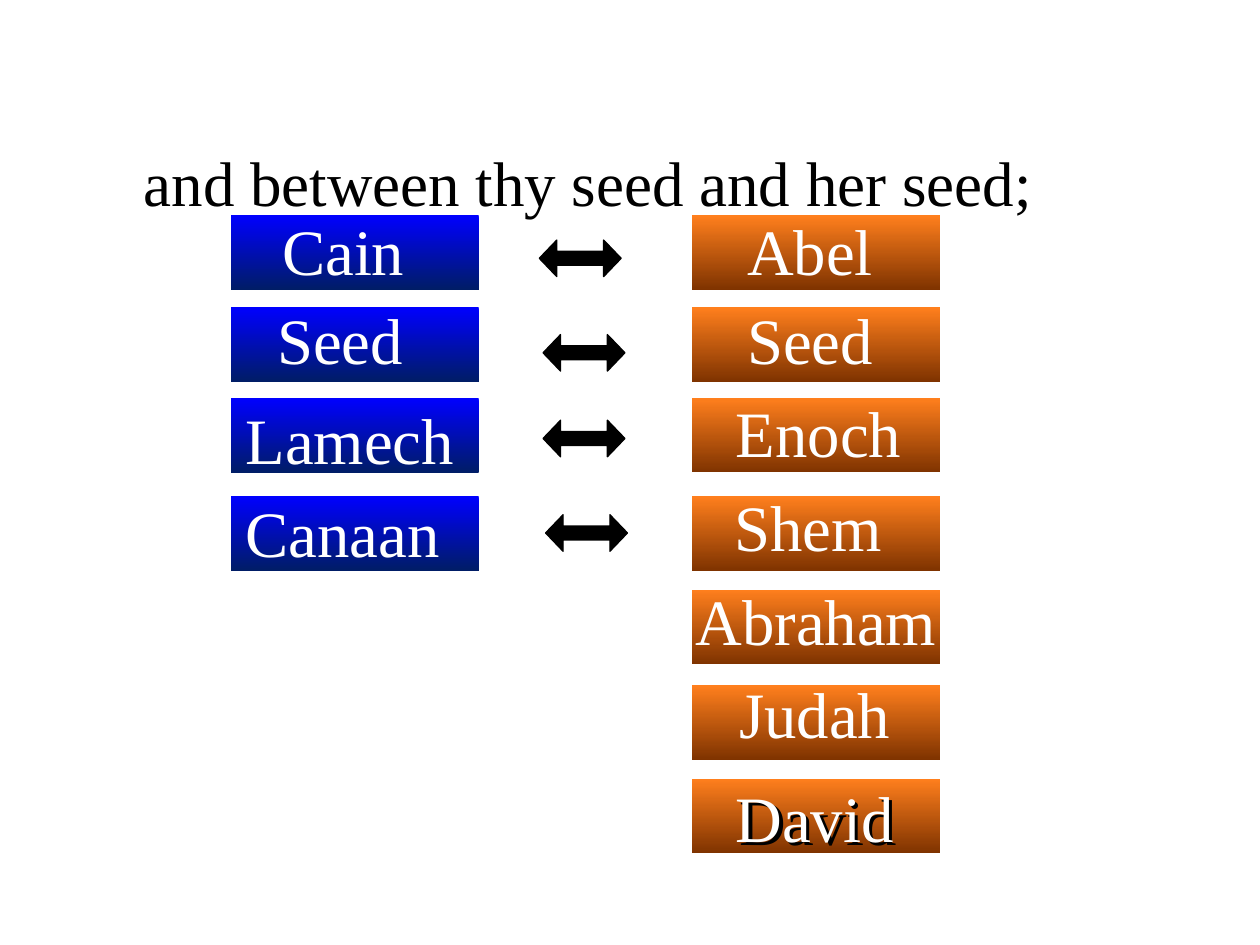
import pptx
import pptx.util
import pptx.dml.color
import pptx.enum.shapes
import pptx.enum.text
import lxml.etree
import pptx.oxml.ns

Inches = pptx.util.Inches
RGBColor = pptx.dml.color.RGBColor
Align = pptx.enum.text.PP_ALIGN
Shape = pptx.enum.shapes.MSO_SHAPE

BLACK = RGBColor(0, 0, 0)
WHITE = RGBColor(0xFF, 0xFF, 0xFF)
BLUES = RGBColor(0, 0, 0xFF), RGBColor(0, 0x1D, 0x66)
RUSTS = RGBColor(0xFF, 0x7F, 0x1D), RGBColor(0x7F, 0x33, 0)
FONT = "Times New Roman"
TILE_W, TILE_H = 1.97, 0.59
ROWS = [1.71, 2.44, 3.16, 3.94, 4.68, 5.44, 6.18]

# Name, then text left, top and width within its tile
LEFT = [
    ("Cain", 0.41, -0.04, 1.11),
    ("Seed", 0.37, -0.06, 1.11),
    ("Lamech", 0.12, 0.01, 1.76),
    ("Canaan", 0.12, -0.03, 1.76),
]
RIGHT = [
    ("Abel", 0.44, -0.04, 1.11),
    ("Seed", 0.44, -0.06, 1.11),
    ("Enoch", 0.35, -0.04, 1.47),
    ("Shem", 0.34, -0.08, 1.47),
    ("Abraham", 0.03, -0.07, 1.95),
    ("Judah", 0, -0.09, 1.95),
    ("David", 0, -0.01, 1.95),
]
CENTRED = ("Judah", "David")
# Left edge and centre height of each arrow
ARROWS = [(4.28, 2.05), (4.31, 2.8), (4.31, 3.48), (4.33, 4.23)]


def add_text(slide, box, text, size, color, align=Align.LEFT):
    label = slide.shapes.add_textbox(*map(Inches, box))
    frame = label.text_frame
    frame.word_wrap = True
    frame.margin_left = frame.margin_right = 0
    frame.margin_top = frame.margin_bottom = 0
    frame.text = text
    frame.paragraphs[0].alignment = align
    font = frame.paragraphs[0].runs[0].font
    font.name, font.size = FONT, pptx.util.Pt(size)
    font.color.rgb = color
    return label


def add_shadow(label):
    qn = pptx.oxml.ns.qn
    effects = lxml.etree.SubElement(label.element.spPr, qn("a:effectLst"))
    shadow = lxml.etree.SubElement(
        effects, qn("a:outerShdw"), dist=str(Inches(0.04)), dir="2700000")
    lxml.etree.SubElement(shadow, qn("a:srgbClr"), val=str(BLACK))


def add_tile(slide, left, top, colors):
    tile = slide.shapes.add_shape(
        Shape.RECTANGLE, *map(Inches, (left, top, TILE_W, TILE_H)))
    tile.shadow.inherit = False
    tile.line.fill.background()
    tile.fill.gradient()
    tile.fill.gradient_angle = 270
    for stop, color in zip(tile.fill.gradient_stops, colors):
        stop.color.rgb = color


def add_names(slide, left, names, colors):
    for top, (name, dx, dy, width) in zip(ROWS, names):
        add_tile(slide, left, top, colors)
        align = Align.CENTER if name in CENTRED else Align.LEFT
        label = add_text(slide, (left + dx, top + dy, width, 0.57),
                         name, 37, WHITE, align)
        if name == "David":
            add_shadow(label)


def add_arrow(slide, left, mid):
    width, height = 0.65, 0.29
    arrow = slide.shapes.add_shape(
        Shape.LEFT_RIGHT_ARROW,
        *map(Inches, (left, mid - height / 2, width, height)))
    arrow.adjustments[0] = 0.38  # shaft thickness
    arrow.adjustments[1] = 0.48  # head length
    arrow.shadow.inherit = False
    arrow.fill.solid()
    arrow.fill.fore_color.rgb = BLACK
    arrow.line.color.rgb = BLACK
    arrow.line.width = pptx.util.Pt(0.75)


def main():
    deck = pptx.Presentation()
    deck.slide_width, deck.slide_height = Inches(10), Inches(7.5)
    slide = deck.slides.add_slide(deck.slide_layouts[6])

    # Two lines of descent
    add_names(slide, 1.83, LEFT, BLUES)
    add_names(slide, 5.49, RIGHT, RUSTS)

    # Arrows between rivals
    for left, mid in ARROWS:
        add_arrow(slide, left, mid)

    # Heading
    add_text(slide, (1.14, 1.14, 7.18, 0.55),
             "and between thy seed and her seed;", 36, BLACK)
    deck.save("out.pptx")


if __name__ == "__main__":
    main()
